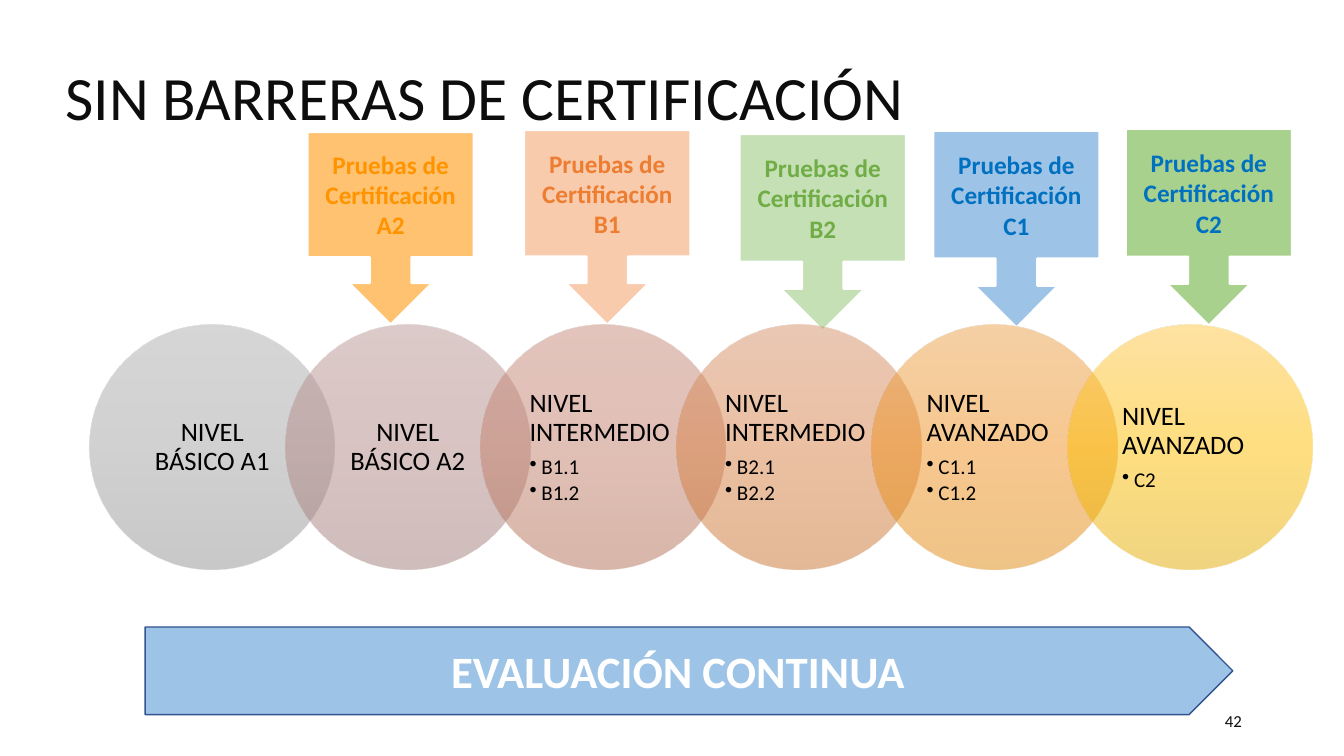
from lxml.etree import SubElement
from pptx import Presentation
from pptx.dml.color import RGBColor
from pptx.enum.shapes import MSO_SHAPE
from pptx.enum.text import MSO_ANCHOR, PP_ALIGN
from pptx.oxml import parse_xml
from pptx.oxml.ns import nsdecls, qn
from pptx.util import Cm, Pt

FONT = "Calibri"
CALLOUTS = [
    ("A2", (7.75, 3.33, 4.19, 4.85), "FF9300", "FF9300", 56),
    ("B1", (13.21, 3.28, 4.19, 4.9), "F8CBAD", "ED7D31", 100),
    ("B2", (18.64, 3.38, 4.19, 4.95), "C5E0B4", "70AD47", 100),
    ("C1", (23.52, 3.3, 4.19, 4.95), "9DC3E6", "0070C0", 100),
    ("C2", (28.37, 3.25, 4.19, 4.95), "A9D18E", "0070C0", 100),
]
LEVELS = [
    ("NIVEL BÁSICO A1", [], 0.33, ("AFAFAF", "A5A5A5", "939393")),
    ("NIVEL BÁSICO A2", [], 0.33, ("BA9895", "B38A86", "A17B77")),
    ("NIVEL INTERMEDIO", ["B1.1", "B1.2"], 0.33, ("C78C7A", "C4806C", "B36E54")),
    ("NIVEL INTERMEDIO", ["B2.1", "B2.2"], 0.33, ("D69268", "D98346", "C8722F")),
    ("NIVEL AVANZADO", ["C1.1", "C1.2"], 0.48, ("EBA34B", "F19220", "E18A0E")),
    ("NIVEL AVANZADO", ["C2"], 0.48, ("FFC746", "FFC000", "E3AB00")),
]


def rgb(hex_color):
    """Turn a hex string into a colour."""
    return RGBColor.from_string(hex_color)


def lengths(box):
    """Turn a box in centimetres into slide lengths."""
    return [Cm(value) for value in box]


def write(frame, text, size, color="000000", bold=False, align=PP_ALIGN.LEFT,
          spacing=1.0, after=0, bullet=False, first=True):
    """Write one formatted paragraph into a text frame."""
    frame.word_wrap = True
    frame.vertical_anchor = MSO_ANCHOR.MIDDLE
    paragraph = frame.paragraphs[0] if first else frame.add_paragraph()
    if bullet:
        properties = paragraph._p.get_or_add_pPr()
        properties.set("marL", str(Cm(0.3)))
        properties.set("indent", str(-Cm(0.3)))
        SubElement(properties, qn("a:buChar")).set("char", "•")
        paragraph.level = 1
    paragraph.alignment = align
    paragraph.line_spacing = spacing
    paragraph.space_after = Pt(after)
    run = paragraph.add_run()
    run.text = text
    run.font.name = FONT
    run.font.size = Pt(size)
    run.font.bold = bold
    run.font.color.rgb = rgb(color)


def add_preset(slide, kind, box, fill=None, line=None, line_width=1.0):
    """Add a flat preset shape with an optional fill and outline."""
    preset = slide.shapes.add_shape(kind, *lengths(box))
    preset.shadow.inherit = False
    if fill:
        preset.fill.solid()
        preset.fill.fore_color.rgb = rgb(fill)
    if line:
        preset.line.color.rgb = rgb(line)
        preset.line.width = Pt(line_width)
    else:
        preset.line.fill.background()
    return preset


def add_label(slide, box, text, size, **style):
    """Add a text box with one paragraph."""
    label = slide.shapes.add_textbox(*lengths(box))
    write(label.text_frame, text, size, **style)


def add_callout(slide, level, box, fill, color, opacity):
    """Add the arrow callout for the exam of one level."""
    callout = add_preset(slide, MSO_SHAPE.DOWN_ARROW_CALLOUT, box, fill, "FFFFFF", 1.5)
    if opacity < 100:
        tint = callout.fill._xPr.find(qn("a:solidFill"))[0]
        SubElement(tint, qn("a:alpha")).set("val", str(opacity * 1000))
    write(callout.text_frame, f"Pruebas de Certificación {level}", 18,
          color=color, bold=True, align=PP_ALIGN.CENTER)


def fade(circle, colors):
    """Fill a circle with a half-transparent vertical gradient."""
    stops = "".join(
        f'<a:gs pos="{index * 50000}"><a:srgbClr val="{color}">'
        f'<a:alpha val="50000"/></a:srgbClr></a:gs>'
        for index, color in enumerate(colors))
    gradient = parse_xml(
        f'<a:gradFill {nsdecls("a")} rotWithShape="1"><a:gsLst>{stops}</a:gsLst>'
        '<a:lin ang="5400000" scaled="0"/></a:gradFill>')
    circle._element.spPr.find(qn("a:prstGeom")).addnext(gradient)


def add_level(slide, box, heading, sublevels, inset, colors):
    """Add one level circle with its heading and sublevels."""
    left, top, width, height = box
    fade(add_preset(slide, MSO_SHAPE.OVAL, box), colors)
    margin = 0.9
    frame = slide.shapes.add_textbox(*lengths(
        (left + margin, top + margin, width - 2 * margin, height - 2 * margin))).text_frame
    frame.margin_left, frame.margin_right = Cm(inset), Cm(0.33)
    frame.margin_top = frame.margin_bottom = Cm(0.08)
    align = PP_ALIGN.LEFT if sublevels else PP_ALIGN.CENTER
    write(frame, heading, 19, align=align, spacing=0.9, after=6.6)
    for sublevel in sublevels:
        write(frame, sublevel, 15, spacing=0.9, after=2.3, bullet=True, first=False)


def add_level_chain(slide, box):
    """Place the overlapping level circles along a box."""
    left, top, width, diameter = box
    pitch = (width - diameter) / (len(LEVELS) - 1)
    for index, level in enumerate(LEVELS):
        add_level(slide, (left + index * pitch, top, diameter, diameter), *level)


def add_evaluation_bar(slide, box):
    """Add the bar for continuous evaluation."""
    bar = add_preset(slide, MSO_SHAPE.PENTAGON, box, "9DC3E6", "325491")
    write(bar.text_frame, "EVALUACIÓN CONTINUA", 32, color="FFFFFF",
          bold=True, align=PP_ALIGN.CENTER)


def main():
    """Build and save the slide."""
    deck = Presentation()
    deck.slide_width, deck.slide_height = Cm(33.87), Cm(19.05)
    slide = deck.slides.add_slide(deck.slide_layouts[6])
    add_label(slide, (23.93, 17.65, 7.62, 1.02), "42", 12,
              color="0D0D0D", align=PP_ALIGN.RIGHT)
    for callout in CALLOUTS[:-1]:
        add_callout(slide, *callout)
    add_label(slide, (1.4, 0.46, 26.59, 4.17), "SIN BARRERAS DE CERTIFICACIÓN", 44,
              color="0D0D0D", spacing=0.9)
    add_evaluation_bar(slide, (3.66, 15.8, 27.41, 2.21))
    add_level_chain(slide, (2.26, 8.18, 30.82, 6.18))
    add_callout(slide, *CALLOUTS[-1])
    deck.save("out.pptx")


if __name__ == "__main__":
    main()
